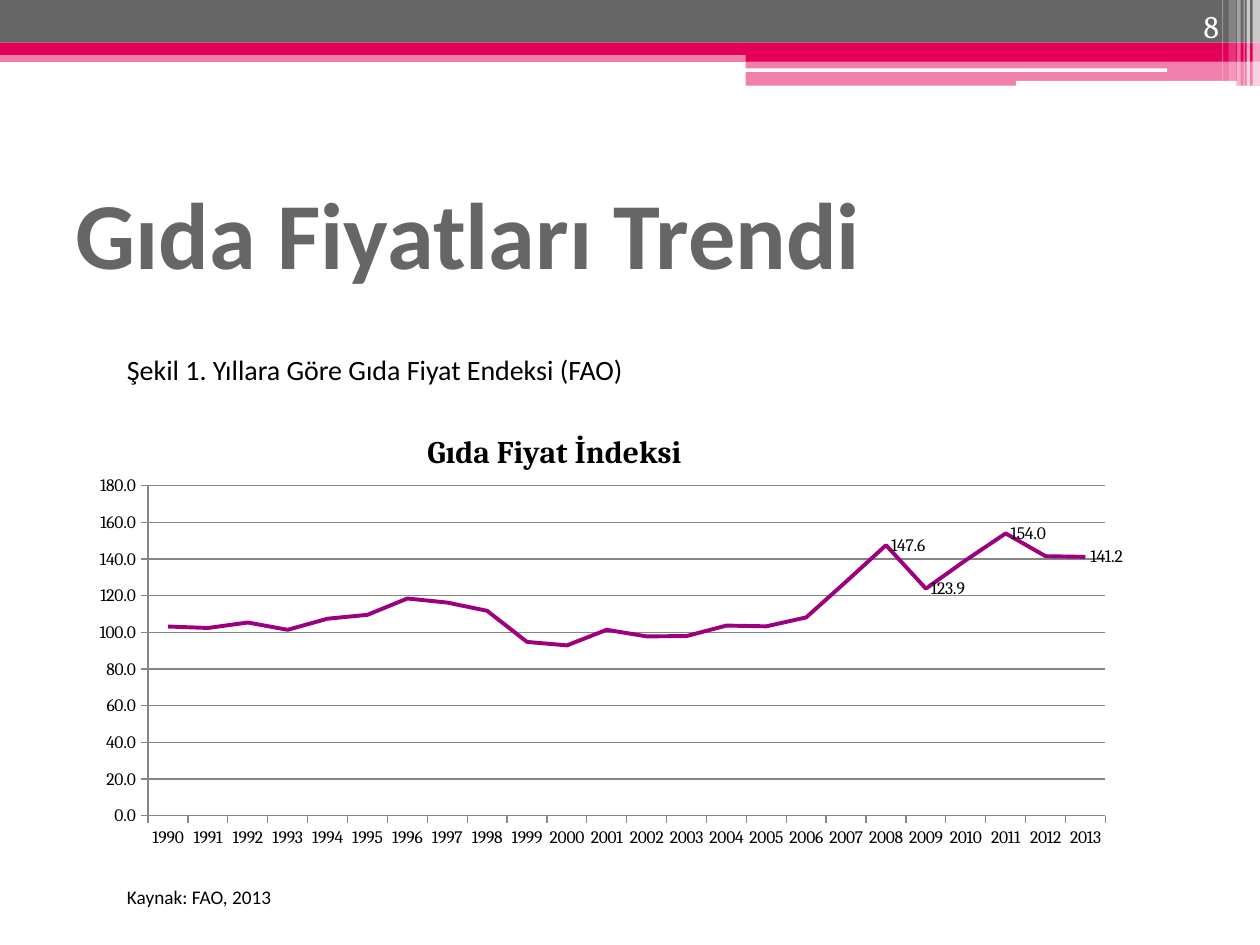
from lxml.etree import SubElement
from pptx import Presentation
from pptx.chart.data import CategoryChartData
from pptx.dml.color import RGBColor
from pptx.enum.chart import XL_CHART_TYPE, XL_LABEL_POSITION, XL_TICK_MARK
from pptx.enum.shapes import MSO_SHAPE
from pptx.enum.text import MSO_ANCHOR, PP_ALIGN
from pptx.oxml.ns import qn
from pptx.util import Cm, Pt

COLORS = {
    "gray": "666666",
    "pink": "E40059",
    "white": "FFFFFF",
    "black": "000000",
    "purple": "9C007F",
    "grid": "868686",
}
COLORS = {name: RGBColor.from_string(value) for name, value in COLORS.items()}


def write_text(shape, text, size, font_name, color, bold=False,
               align=PP_ALIGN.LEFT, anchor=MSO_ANCHOR.TOP):
    frame = shape.text_frame
    frame.word_wrap = True
    frame.vertical_anchor = anchor
    paragraph = frame.paragraphs[0]
    paragraph.alignment = align
    run = paragraph.add_run()
    run.text = text
    run.font.size = Pt(size)
    run.font.name = font_name
    run.font.bold = bold
    run.font.color.rgb = COLORS[color]


def set_layout(parent, position, **settings):
    for old_layout in parent.findall(qn("c:layout")):
        parent.remove(old_layout)
    layout = SubElement(parent, qn("c:layout"))
    manual = SubElement(layout, qn("c:manualLayout"))
    for tag, value in settings.items():
        SubElement(manual, qn(f"c:{tag}")).set("val", str(value))
    parent.insert(position, layout)


presentation = Presentation()
presentation.slide_width = Cm(25.4)
presentation.slide_height = Cm(19.05)
slide = presentation.slides.add_slide(presentation.slide_layouts[5])

RECTANGLE, ROUNDED = MSO_SHAPE.RECTANGLE, MSO_SHAPE.ROUNDED_RECTANGLE
header_bars = [
    (RECTANGLE, 0, 1.02, 25.4, 0.23, "pink", 50),
    (RECTANGLE, 0, 0, 25.4, 0.86, "gray", 100),
    (RECTANGLE, 0, 0.86, 25.4, 0.25, "pink", 100),
    (RECTANGLE, 15.03, 0.99, 10.37, 0.25, "pink", 100),
    (RECTANGLE, 15.03, 1.23, 10.37, 0.5, "pink", 50),
    (ROUNDED, 15.02, 1.38, 8.51, 0.07, "white", 100),
    (ROUNDED, 20.48, 1.63, 4.45, 0.1, "white", 100),
    (RECTANGLE, 25.25, 0, 0.15, 1.73, "white", 65),
    (RECTANGLE, 25.13, 0, 0.07, 1.73, "white", 65),
    (RECTANGLE, 25.07, 0, 0.02, 1.73, "white", 60),
    (RECTANGLE, 24.94, 0, 0.07, 1.73, "white", 40),
    (RECTANGLE, 24.77, 0, 0.15, 1.63, "white", 20),
    (RECTANGLE, 24.64, 0, 0.02, 1.63, "white", 30),
]
for kind, left, top, width, height, color, opacity in header_bars:
    shape = slide.shapes.add_shape(kind, Cm(left), Cm(top), Cm(width), Cm(height))
    shape.shadow.inherit = False
    shape.line.fill.background()
    shape.fill.solid()
    shape.fill.fore_color.rgb = COLORS[color]
    if opacity < 100:
        fill_color = shape.fill._xPr.find(qn("a:solidFill"))[0]
        SubElement(fill_color, qn("a:alpha")).set("val", str(opacity * 1000))

title = slide.shapes.title
title.left, title.top, title.width, title.height = Cm(1.27), Cm(3.18), Cm(22.86), Cm(2.97)
write_text(title, "Gıda Fiyatları Trendi", 54, "Calibri", "gray", bold=True,
           anchor=MSO_ANCHOR.MIDDLE)

first_year = 1990
food_prices = [
    103.2, 102.4, 105.4, 101.4, 107.5, 109.6, 118.5, 116.3,
    111.8, 94.8, 92.9, 101.4, 97.8, 98.0, 103.7, 103.3,
    108.2, 127.7, 147.6, 123.9, 139.4, 154.0, 141.6, 141.2,
]
chart_data = CategoryChartData(number_format="0.0")
chart_data.categories = [str(first_year + index) for index in range(len(food_prices))]
chart_data.add_series("Gıda Fiyat İndeksi", food_prices)
chart = slide.shapes.add_chart(XL_CHART_TYPE.LINE_STACKED, Cm(1.5), Cm(7.92),
                               Cm(21.21), Cm(9.37), chart_data).chart
chart.has_legend = False
chart.font.name = "Cambria"
chart.font.size = Pt(10)
chart.font.color.rgb = COLORS["black"]

chart.has_title = True
title_run = chart.chart_title.text_frame.paragraphs[0].add_run()
title_run.text = "Gıda Fiyat İndeksi"
title_run.font.name = "Cambria"
title_run.font.size = Pt(18)
title_run.font.bold = True
title_run.font.color.rgb = COLORS["black"]
set_layout(chart.chart_title._element, 1, xMode="edge", yMode="edge", x=0.33, y=0.07)
set_layout(chart._chartSpace.chart.plotArea, 0, layoutTarget="inner",
           xMode="edge", yMode="edge", x=0.07, y=0.2, w=0.91, h=0.71)

value_axis = chart.value_axis
value_axis.minimum_scale = 0
value_axis.maximum_scale = 180
value_axis.major_unit = 20
value_axis.has_major_gridlines = True
value_axis.tick_labels.number_format = "0.0"
value_axis.tick_labels.number_format_is_linked = False
for axis in (chart.category_axis, value_axis):
    axis.major_tick_mark = XL_TICK_MARK.OUTSIDE
    axis.minor_tick_mark = XL_TICK_MARK.NONE
for line in (chart.category_axis.format.line, value_axis.format.line,
             value_axis.major_gridlines.format.line):
    line.color.rgb = COLORS["grid"]
    line.width = Pt(0.75)

series = chart.plots[0].series[0]
series.smooth = False
series.format.line.color.rgb = COLORS["purple"]
series.format.line.width = Pt(2.25)
for year in (2008, 2009, 2011, 2013):
    label = series.points[year - first_year].data_label
    label.position = XL_LABEL_POSITION.RIGHT
    label.font.name = "Cambria"
    label.font.size = Pt(10)
    label.font.color.rgb = COLORS["black"]

captions = [
    ("Şekil 1. Yıllara Göre Gıda Fiyat Endeksi (FAO)", 16, 6.99, 15.8, 0.94),
    ("Kaynak: FAO, 2013", 11, 17.73, 12.19, 0.74),
]
for text, size, top, width, height in captions:
    caption = slide.shapes.add_textbox(Cm(2.31), Cm(top), Cm(width), Cm(height))
    write_text(caption, text, size, "Calibri", "black")

page_number = slide.shapes.add_textbox(Cm(22.71), Cm(0), Cm(2.11), Cm(1.02))
write_text(page_number, "8", 18, "Cambria", "white",
           align=PP_ALIGN.RIGHT, anchor=MSO_ANCHOR.BOTTOM)

presentation.save("out.pptx")
